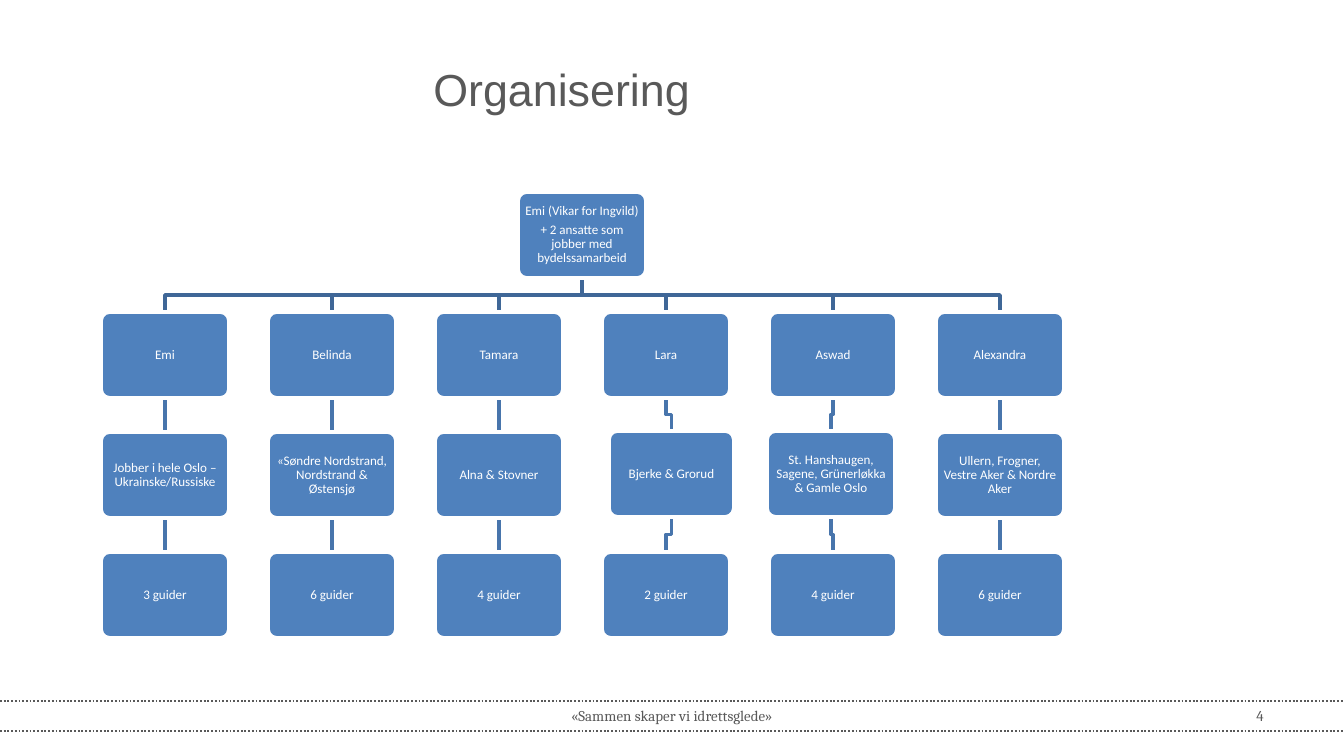
from lxml import etree
from pptx import Presentation
from pptx.dml.color import RGBColor
from pptx.enum.dml import MSO_LINE
from pptx.enum.shapes import MSO_CONNECTOR, MSO_SHAPE
from pptx.enum.text import MSO_ANCHOR, MSO_AUTO_SIZE, PP_ALIGN
from pptx.oxml.ns import qn
from pptx.util import Pt

ROUNDED = MSO_SHAPE.ROUNDED_RECTANGLE
STRAIGHT = MSO_CONNECTOR.STRAIGHT
DOTTED = MSO_LINE.ROUND_DOT
CENTER, RIGHT = PP_ALIGN.CENTER, PP_ALIGN.RIGHT
TOP, MIDDLE = MSO_ANCHOR.TOP, MSO_ANCHOR.MIDDLE

SCALE = 914400 / 134.4  # EMU per px
GREY, WHITE, BLUE = "595959", "FFFFFF", "4F81BD"
BRANCH, STEM = "3F6797", "4875AC"
BOX_W, BOX_H = 128, 86
LEFT, COL_STEP = 101, 167
TOP_Y, ROW_STEP = 192, 120

columns = [
    ("Emi", "Jobber i hele Oslo – Ukrainske/Russiske", "3 guider"),
    ("Belinda", "«Søndre Nordstrand, Nordstrand & Østensjø", "6 guider"),
    ("Tamara", "Alna & Stovner", "4 guider"),
    ("Lara", "Bjerke & Grorud", "2 guider"),
    ("Aswad", "St. Hanshaugen, Sagene, Grünerløkka & Gamle Oslo", "4 guider"),
    ("Alexandra", "Ullern, Frogner, Vestre Aker & Nordre Aker", "6 guider"),
]
# Boxes set slightly off the grid: (column, row) -> x, y, width
moved = {(3, 2): (609, 431, 125), (4, 2): (767, 431, BOX_W)}


def px(*values):
    """Turn px lengths into a list of EMU."""
    return [round(v * SCALE) for v in values]


def rgb(color):
    return RGBColor.from_string(color)


prs = Presentation()
prs.slide_width, prs.slide_height = px(1344, 756)
s = prs.slides.add_slide(prs.slide_layouts[5])

# Title
title = s.shapes.title
title.left, title.top, title.width, title.height = px(101, 50, 921, 95)
tf = title.text_frame
tf.text = "Organisering"
tf.auto_size = MSO_AUTO_SIZE.NONE
tf.vertical_anchor = TOP
tf.margin_top, = px(12)
p = tf.paragraphs[0]
p.alignment = CENTER
p.font.name, p.font.size = "Arial", Pt(24)
p.font.color.rgb = rgb(GREY)

# Footer
for y in (701, 731):
    rule = s.shapes.add_connector(STRAIGHT, *px(0, y, 1344, y))
    rule.line.color.rgb = rgb(GREY)
    rule.line.width = Pt(1)
    rule.line.dash_style = DOTTED
    etree.SubElement(rule._element.spPr, qn("a:effectLst"))

for text, x, w, align in (("«Sammen skaper vi idrettsglede»", 459, 426, CENTER),
                          ("4", 964, 313, RIGHT)):
    tf = s.shapes.add_textbox(*px(x, 701, w, 30)).text_frame
    tf.word_wrap = True
    tf.vertical_anchor = MIDDLE
    tf.text = text
    p = tf.paragraphs[0]
    p.alignment = align
    p.font.name, p.font.size = "Cambria", Pt(8)
    p.font.color.rgb = rgb(GREY)

# Chart layout: boxes as (x, y, width, lines), links as (parent, child, color)
root = (518, TOP_Y, BOX_W, ["Emi (Vikar for Ingvild)",
                            "+ 2 ansatte som jobber med bydelssamarbeid"])
boxes, links = [root], []
for col, texts in enumerate(columns):
    parent = root
    for row, text in enumerate(texts, 1):
        grid = (LEFT + col * COL_STEP, TOP_Y + row * ROW_STEP, BOX_W)
        box = (*moved.get((col, row), grid), [text])
        boxes.append(box)
        links.append((parent, box, BRANCH if row == 1 else STEM))
        parent = box

for parent, child, color in links:
    x1, x2 = (x + w / 2 for x, y, w, lines in (parent, child))
    y1, y2 = parent[1] + BOX_H, child[1]
    if x1 == x2:
        link = s.shapes.add_connector(STRAIGHT, *px(x1, y1, x2, y2))
        etree.SubElement(link._element.spPr, qn("a:effectLst"))
    else:
        mid = (y1 + y2) / 2
        outline = s.shapes.build_freeform(*px(x1, y1))
        outline.add_line_segments([px(x1, mid), px(x2, mid), px(x2, y2)], close=False)
        link = outline.convert_to_shape()
        link.fill.background()
        link.shadow.inherit = False
    link.line.color.rgb = rgb(color)
    link.line.width = Pt(2)

for x, y, w, lines in boxes:
    sp = s.shapes.add_shape(ROUNDED, *px(x, y, w, BOX_H))
    sp.adjustments[0] = 0.1
    sp.shadow.inherit = False
    sp.fill.solid()
    sp.fill.fore_color.rgb = rgb(BLUE)
    sp.line.color.rgb = rgb(WHITE)
    sp.line.width = Pt(2)
    tf = sp.text_frame
    tf.word_wrap = True
    tf.vertical_anchor = MIDDLE
    tf.margin_left, tf.margin_top, tf.margin_right, tf.margin_bottom = px(3, 6, 3, 6)
    tf.text = "\n".join(lines)
    for p in tf.paragraphs:
        p.alignment = CENTER
        p.line_spacing = 0.9
        p.space_after = Pt(2.5)
        p.font.name, p.font.size = "Calibri", Pt(7)
        p.font.color.rgb = rgb(WHITE)

prs.save("out.pptx")
